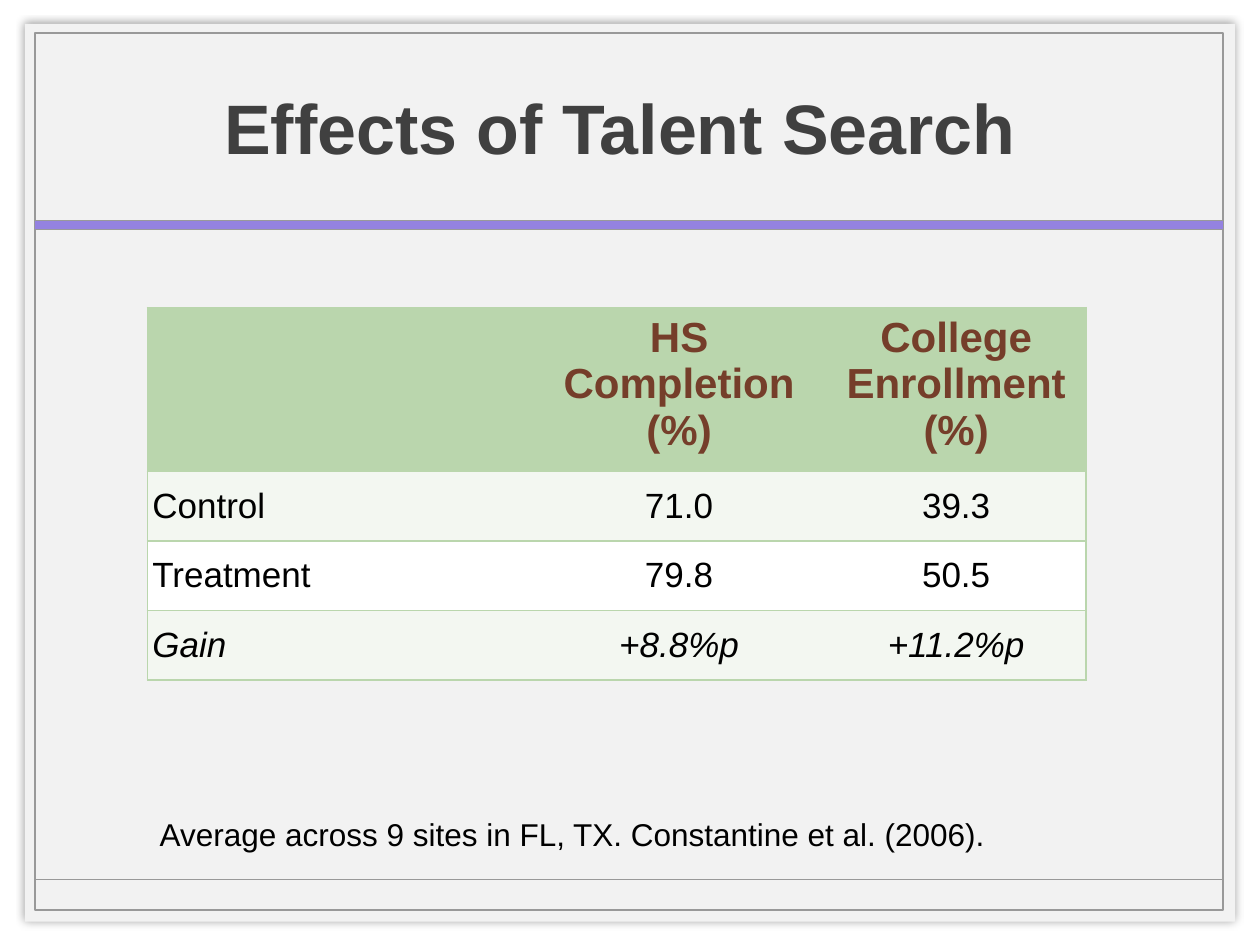
import pptx
import pptx.util
import pptx.dml.color
import pptx.enum.shapes
import pptx.enum.text
import pptx.oxml.ns
import lxml.etree

Cm = pptx.util.Cm
Pt = pptx.util.Pt
qn = pptx.oxml.ns.qn
align = pptx.enum.text.PP_ALIGN
anchor = pptx.enum.text.MSO_ANCHOR
rect = pptx.enum.shapes.MSO_SHAPE.RECTANGLE


def color(text):
    return pptx.dml.color.RGBColor.from_string(text)


def style(frame, size, tint, bold=False, slant=False, side=align.LEFT):
    for para in frame.paragraphs:
        para.alignment = side
        for run in para.runs:
            font = run.font
            font.name, font.size = "Arial", Pt(size)
            font.bold, font.italic = bold, slant
            font.color.rgb = color(tint)


deck = pptx.Presentation()
deck.slide_width, deck.slide_height = Cm(25.4), Cm(19.05)
slide = deck.slides.add_slide(deck.slide_layouts[6])
shapes = slide.shapes

# Page panel, frame and purple bar: place, fill, line, line width
boxes = [
    (0.5, 0.48, 24.4, 18.1, "F2F2F2", None, 0),
    (0.7, 0.66, 23.96, 17.68, None, "999999", 1),
    (0.7, 4.45, 23.96, 0.18, "9482E0", "999999", 0.25),
]
parts = []
for left, top, width, height, fill, line, thick in boxes:
    box = shapes.add_shape(rect, Cm(left), Cm(top), Cm(width), Cm(height))
    box.shadow.inherit = False
    if fill:
        box.fill.solid()
        box.fill.fore_color.rgb = color(fill)
    else:
        box.fill.background()
    if line:
        box.line.color.rgb = color(line)
        box.line.width = Pt(thick)
    else:
        box.line.fill.background()
    parts.append(box)

# Soft shadow around the panel
glow = lxml.etree.SubElement(
    parts[0]._element.spPr.find(qn("a:effectLst")), qn("a:outerShdw"),
    blurRad=str(Pt(5)), dist="0", dir="0", algn="ctr", rotWithShape="0")
shade = lxml.etree.SubElement(glow, qn("a:srgbClr"), val="000000")
lxml.etree.SubElement(shade, qn("a:alpha"), val="40000")

# Footer rule
rule = shapes.add_connector(pptx.enum.shapes.MSO_CONNECTOR.STRAIGHT,
                            Cm(0.7), Cm(17.73), Cm(24.66), Cm(17.73))
rule.line.color.rgb = color("999999")
rule.line.width = Pt(1)
lxml.etree.SubElement(rule._element.spPr, qn("a:effectLst"))

# Title
title = shapes.add_textbox(Cm(2.3), Cm(0.68), Cm(20.4), Cm(3.74)).text_frame
title.word_wrap = True
title.vertical_anchor = anchor.MIDDLE
title.text = "Effects of Talent Search"
style(title, 40, "404040", bold=True, side=align.CENTER)

# Results table
data = [
    ["", "HS Completion (%)", "College Enrollment (%)"],
    ["Control", "71.0", "39.3"],
    ["Treatment", "79.8", "50.5"],
    ["Gain", "+8.8%p", "+11.2%p"],
]
fills = ["BAD6AD", "F3F7F1", "FFFFFF", "F3F7F1"]
cols = [7.75, 5.94, 5.23]
rows = [3.1, 1.4, 1.4, 1.4]
table = shapes.add_table(len(rows), len(cols), Cm(2.97), Cm(6.2),
                         Cm(sum(cols)), Cm(sum(rows))).table
table.horz_banding = False
for col, width in zip(table.columns, cols):
    col.width = Cm(width)
for row, height in zip(table.rows, rows):
    row.height = Cm(height)

for r, texts in enumerate(data):
    for c, text in enumerate(texts):
        cell = table.cell(r, c)
        cell.margin_left = cell.margin_right = Cm(0.1)
        cell.margin_top = cell.margin_bottom = Cm(0.13)
        cell.vertical_anchor = anchor.MIDDLE if r else anchor.TOP
        cell.text_frame.text = text
        side = align.CENTER if c else align.LEFT
        if r:
            style(cell.text_frame, 20, "000000", slant=r == 3, side=side)
        else:
            style(cell.text_frame, 24, "753E2A", bold=True, side=side)

        # Borders: every row edge, but only the outer column edges
        props = cell._tc.get_or_add_tcPr()
        edges = {"L": c == 0, "R": c == len(cols) - 1, "T": True, "B": True}
        for edge, drawn in edges.items():
            line = lxml.etree.SubElement(props, qn("a:ln" + edge), w=str(Pt(1)))
            if drawn:
                paint = lxml.etree.SubElement(line, qn("a:solidFill"))
                lxml.etree.SubElement(paint, qn("a:srgbClr"), val="BAD6AD")
            else:
                lxml.etree.SubElement(line, qn("a:noFill"))
        cell.fill.solid()
        cell.fill.fore_color.rgb = color(fills[r])

# Source note
note = shapes.add_textbox(Cm(2.97), Cm(16.3), Cm(18.92), Cm(1.02)).text_frame
note.word_wrap = True
note.text = "Average across 9 sites in FL, TX. Constantine et al. (2006)."
style(note, 18, "000000")

deck.save("out.pptx")
